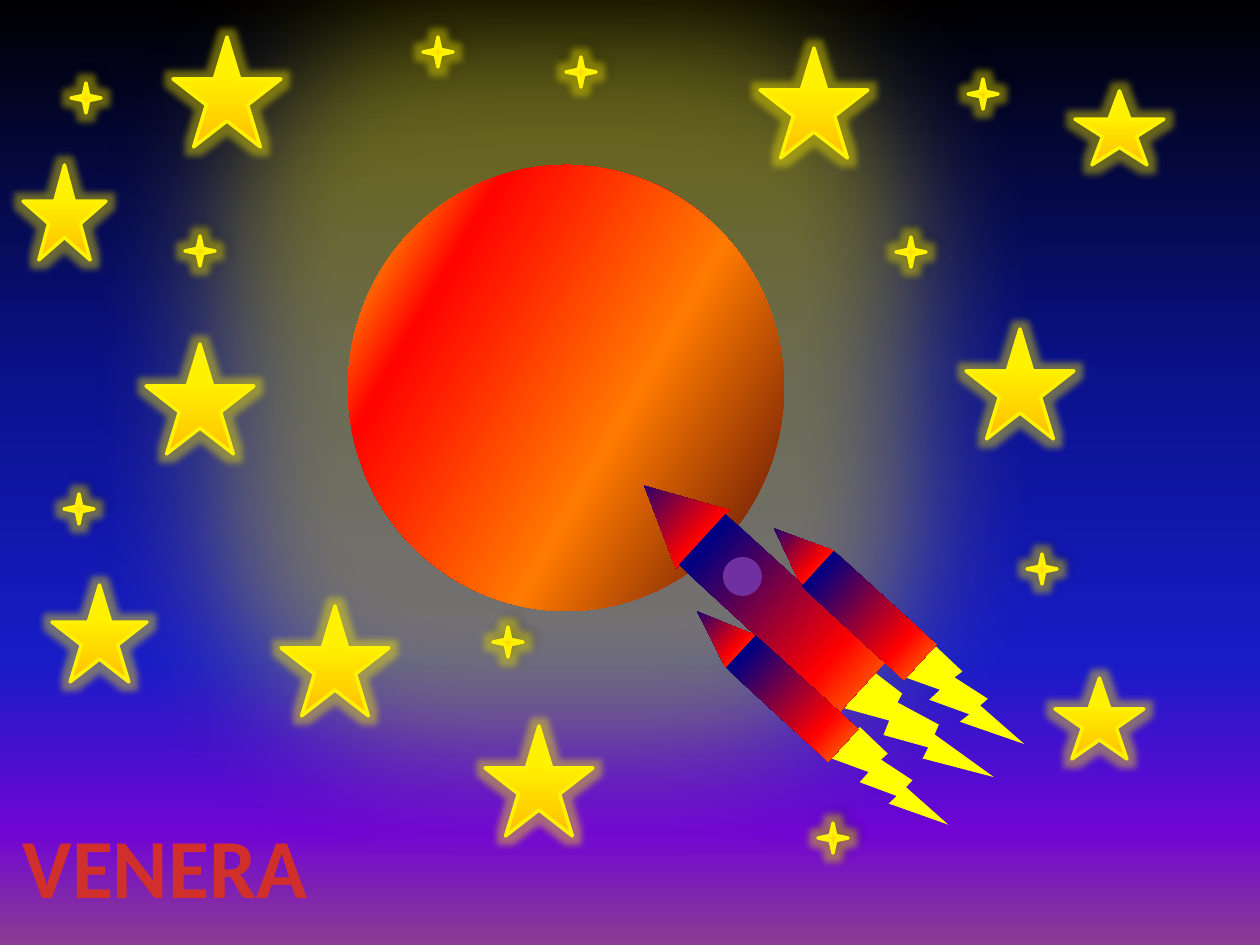
"""Build the Venera slide: a rocket flying past a glowing planet among stars."""
import pptx
import pptx.dml.color
import pptx.enum.shapes
import pptx.enum.text
import pptx.oxml
import pptx.oxml.ns
import pptx.util

PX = 914400 / 126
KIND = pptx.enum.shapes.MSO_SHAPE
NS = pptx.oxml.ns.nsdecls("a")
COLORS = {
    "yellow": "FFF200", "gold": "FFC000", "flame": "FFFF00", "window": "7030A0",
    "red": "FF0300", "orange": "FF7A00", "maroon": "4D0808", "black": "000000",
}
GRADIENTS = {
    "sky": (90, [(0, "000000"), (40, "0A128C"), (70, "181CC7"), (88, "7005D4"), (100, "8C3D91")]),
    "planet": (30, [(0, COLORS["yellow"]), (23, COLORS["red"]), (61, COLORS["orange"]), (100, COLORS["maroon"])]),
    "title": (90, [(0, "FC7C7A"), (75, "D02F2C"), (100, "C70500")]),
    "star": (90, [(33, COLORS["yellow"]), (99, COLORS["gold"])]),
    "sparkle": (90, [(9, COLORS["yellow"]), (100, COLORS["gold"])]),
    "hull": (90, [(14, "000082"), (73, "FF0000"), (100, "FF8200")]),
}


def paint(fill, owner, name):
    angle, stops = GRADIENTS[name]
    fill.gradient()
    gradient = next(owner.iter(pptx.oxml.ns.qn("a:gradFill")))
    stop_xml = "".join(
        f'<a:gs pos="{at * 1000}"><a:srgbClr val="{color}"/></a:gs>' for at, color in stops)
    gradient.getparent().replace(gradient, pptx.oxml.parse_xml(
        f'<a:gradFill {NS} rotWithShape="1"><a:gsLst>{stop_xml}</a:gsLst>'
        f'<a:lin ang="{angle * 60000}" scaled="0"/></a:gradFill>'))


def draw(parent, kind, box, look, rotation=0, glow=0, outlined=False, shadowed=False):
    part = parent.shapes.add_shape(kind, *(round(n * PX) for n in box))
    part.rotation = rotation
    part.shadow.inherit = False
    if look in GRADIENTS:
        paint(part.fill, part.element.spPr, look)
    else:
        part.fill.solid()
        part.fill.fore_color.rgb = pptx.dml.color.RGBColor.from_string(COLORS[look])
    if outlined:
        part.line.color.rgb = pptx.dml.color.RGBColor.from_string(COLORS["yellow"])
        part.line.width = pptx.util.Pt(2)
    else:
        part.line.fill.background()
    effects = part.element.spPr.find(pptx.oxml.ns.qn("a:effectLst"))
    if glow:
        effects.append(pptx.oxml.parse_xml(
            f'<a:glow {NS} rad="{glow * 12700}"><a:srgbClr val="{COLORS["yellow"]}">'
            '<a:alpha val="40000"/></a:srgbClr></a:glow>'))
    if shadowed:
        effects.append(pptx.oxml.parse_xml(
            f'<a:outerShdw {NS} blurRad="50800" dist="38100" dir="18900000" rotWithShape="0">'
            f'<a:srgbClr val="{COLORS["black"]}"><a:alpha val="40000"/></a:srgbClr></a:outerShdw>'))


deck = pptx.Presentation()
deck.slide_width, deck.slide_height = round(1260 * PX), round(945 * PX)
slide = deck.slides.add_slide(deck.slide_layouts[6])
paint(slide.background.fill, slide.element, "sky")

draw(slide, KIND.OVAL, (348, 165, 436, 446), "planet", glow=150)

title = slide.shapes.add_textbox(*(round(n * PX) for n in (10, 808, 466, 115)))
title.text_frame.word_wrap = True
title.text_frame.auto_size = pptx.enum.text.MSO_AUTO_SIZE.SHAPE_TO_FIT_TEXT
title_run = title.text_frame.paragraphs[0].add_run()
title_run.text = "VENERA"
title_format = {"name": "Calibri", "size": pptx.util.Pt(48), "bold": True}
for attribute, value in title_format.items():
    setattr(title_run.font, attribute, value)
paint(title_run.font.fill, title.element, "title")

stars = slide.shapes.add_group_shape()
LARGE = (108, 110)
for left, top, width, height in [
    (173, 37, *LARGE), (23, 165, 83, 95), (146, 344, *LARGE), (281, 606, *LARGE),
    (760, 48, *LARGE), (52, 585, 95, 97), (485, 726, *LARGE), (1055, 678, 89, 81),
    (966, 329, *LARGE), (1075, 91, 89, 74),
]:
    draw(stars, KIND.STAR_5_POINT, (left, top, width, height), "star", glow=8, outlined=True)
for left, top in [
    (185, 236), (71, 83), (566, 57), (423, 37), (64, 494),
    (818, 823), (493, 627), (968, 79), (1027, 554), (896, 237),
]:
    draw(stars, KIND.STAR_4_POINT, (left, top, 30, 30), "sparkle",
         glow=8, outlined=True, shadowed=True)

rocket = slide.shapes.add_group_shape()
HEADING = 312.5
for flame, tilt in [
    ((905, 640, 107, 118), 346.6), ((838, 722, 96, 118), 344.2), ((861, 648, 100, 163), 331.4),
]:
    draw(rocket, KIND.LIGHTNING_BOLT, flame, "flame", tilt)
for nose in [(634, 473, 79, 79), (772, 519, 48, 59), (697, 602, 44, 59)]:
    draw(rocket, KIND.ISOSCELES_TRIANGLE, nose, "hull", HEADING)
for body in [(748, 504, 69, 218), (845, 546, 48, 139), (770, 629, 44, 139)]:
    draw(rocket, KIND.RECTANGLE, body, "hull", HEADING)
draw(rocket, KIND.OVAL, (723, 557, 39, 39), "window", HEADING)

deck.save("out.pptx")
